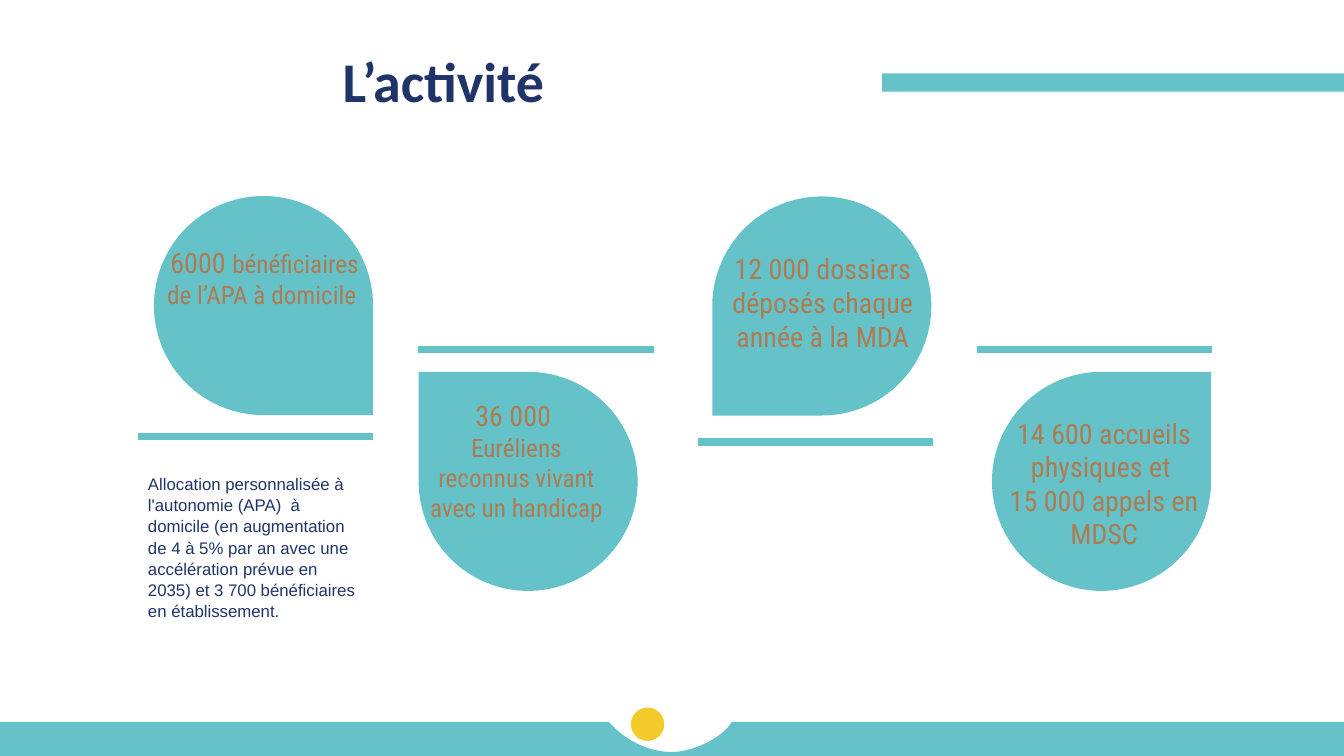
from lxml import etree
from pptx import Presentation, util as u
from pptx.dml.color import RGBColor
from pptx.enum import shapes, text
from pptx.oxml.ns import qn

TEAL, NAVY, TAN, GOLD = "64C2C8", "213469", "AF7B51", "F2CB2A"
WIDE, HIGH = 33.87, 19.05
DROP, RULE = 5.52, 5.93


def color(code):
    return RGBColor.from_string(code)


def bend(a, b, c, d, steps=16):
    spots = []
    for i in range(1, steps + 1):
        t = i / steps
        s = 1 - t
        mix = (s ** 3, 3 * s * s * t, 3 * s * t * t, t ** 3)
        spots.append(tuple(sum(m * p[k] for m, p in zip(mix, (a, b, c, d)))
                           for k in (0, 1)))
    return spots


class Page:
    """Hold the style and the current slide."""

    styles = {
        "title": {"name": "Calibri", "size": u.Pt(40), "bold": True, "ink": NAVY},
        "big": {"name": "Roboto Condensed", "size": u.Pt(20), "ink": TAN},
        "mid": {"name": "Roboto Condensed", "size": u.Pt(18), "ink": TAN},
        "note": {"name": "Arial", "size": u.Pt(12), "ink": NAVY},
    }

    def __init__(self, deck):
        self.slide = deck.slides.add_slide(deck.slide_layouts[5])
        self.items = self.slide.shapes

    def style(self, font, kind):
        for key, value in self.styles[kind].items():
            if key == "ink":
                font.color.rgb = color(value)
            else:
                setattr(font, key, value)

    def paint(self, item, fill):
        item.shadow.inherit = False
        item.fill.solid()
        item.fill.fore_color.rgb = color(fill)
        item.line.fill.background()

    def words(self, frame, paras, align, space=None):
        form = {"word_wrap": True, "auto_size": text.MSO_AUTO_SIZE.NONE,
                "vertical_anchor": text.MSO_ANCHOR.TOP}
        for key, value in form.items():
            setattr(frame, key, value)
        for i, runs in enumerate(paras):
            para = frame.add_paragraph() if i else frame.paragraphs[0]
            for key, value in {"alignment": align, "line_spacing": space}.items():
                setattr(para, key, value)
            for part, kind in runs:
                run = para.add_run()
                run.text = part
                self.style(run.font, kind)

    def title(self, name, box):
        head = self.items.title
        for key, value in zip(("left", "top", "width", "height"), box):
            setattr(head, key, u.Cm(value))
        self.words(head.text_frame, [[(name, "title")]], text.PP_ALIGN.LEFT)

    def label(self, box, paras, align=text.PP_ALIGN.CENTER, space=None):
        item = self.items.add_textbox(*map(u.Cm, box))
        self.words(item.text_frame, paras, align, space)

    def shape(self, kind, box, fill, turn=0):
        item = self.items.add_shape(kind, *map(u.Cm, box))
        item.rotation = turn
        self.paint(item, fill)

    def rule(self, x, y):
        line = self.items.add_connector(
            shapes.MSO_CONNECTOR.STRAIGHT, *map(u.Cm, (x, y, x + RULE, y)))
        line.line.color.rgb = color(TEAL)
        line.line.width = u.Pt(5.5)
        etree.SubElement(line._element.spPr, qn("a:effectLst"))

    def outline(self, spots, fill):
        spots = [(u.Cm(x), u.Cm(y)) for x, y in spots]
        pen = self.items.build_freeform(*spots[0], scale=1.0)
        pen.add_line_segments(spots[1:], close=True)
        self.paint(pen.convert_to_shape(), fill)


def main():
    deck = Presentation()
    deck.slide_width, deck.slide_height = u.Cm(WIDE), u.Cm(HIGH)
    page = Page(deck)
    kinds = shapes.MSO_SHAPE

    left, low, right = (15.34, 18.19), (16.94, 18.95), (18.44, 18.19)
    page.outline([(0, 18.19), left,
                  *bend(left, (15.82, 18.72), (16.41, 18.95), low),
                  *bend(low, (17.48, 18.95), (18.24, 18.57), right),
                  (WIDE, 18.19), (WIDE, HIGH), (0, HIGH)], TEAL)
    page.shape(kinds.OVAL, (15.9, 17.83, 0.84, 0.84), GOLD)
    page.title("L’activité", (8.38, 1.04, 25.48, 1.96))
    page.shape(kinds.RECTANGLE, (22.23, 1.85, WIDE - 22.23, 0.46), TEAL)

    facts = [
        ((3.88, 4.94), 90, (3.48, 11), (3.94, 6.07, 5.46, 2.64),
         [[("6000 ", "big"), ("bénéficiaires de l’APA à domicile ", "mid")]]),
        ((10.55, 9.37), 270, (10.54, 8.81), (10.46, 9.91, 5.11, 3.51),
         [[("36 000 ", "big")],
          [("Euréliens reconnus vivant avec un handicap", "mid")]]),
        ((17.95, 4.95), 180, (17.58, 11.13), (17.98, 6.22, 5.51, 2.82),
         [[("12 000 dossiers déposés chaque année à la MDA", "big")]]),
        ((25, 9.37), 0, (24.61, 8.81), (25.07, 10.36, 5.51, 4.19),
         [[("14 600 accueils physiques et ", "big")],
          [("15 000 appels en MDSC", "big")]]),
    ]
    for spot, turn, start, box, paras in facts:
        page.shape(kinds.TEAR, (*spot, DROP, DROP), TEAL, turn)
        page.rule(*start)
        page.label(box, paras)

    note = ("Allocation personnalisée à l'autonomie (APA)  à domicile "
            "(en augmentation de 4 à 5% par an avec une accélération prévue "
            "en 2035) et 3 700 bénéficiaires en établissement.")
    page.label((3.48, 11.79, 5.92, 3.84), [[(note, "note")]],
               text.PP_ALIGN.LEFT, 1.05)
    deck.save("out.pptx")


if __name__ == "__main__":
    main()
